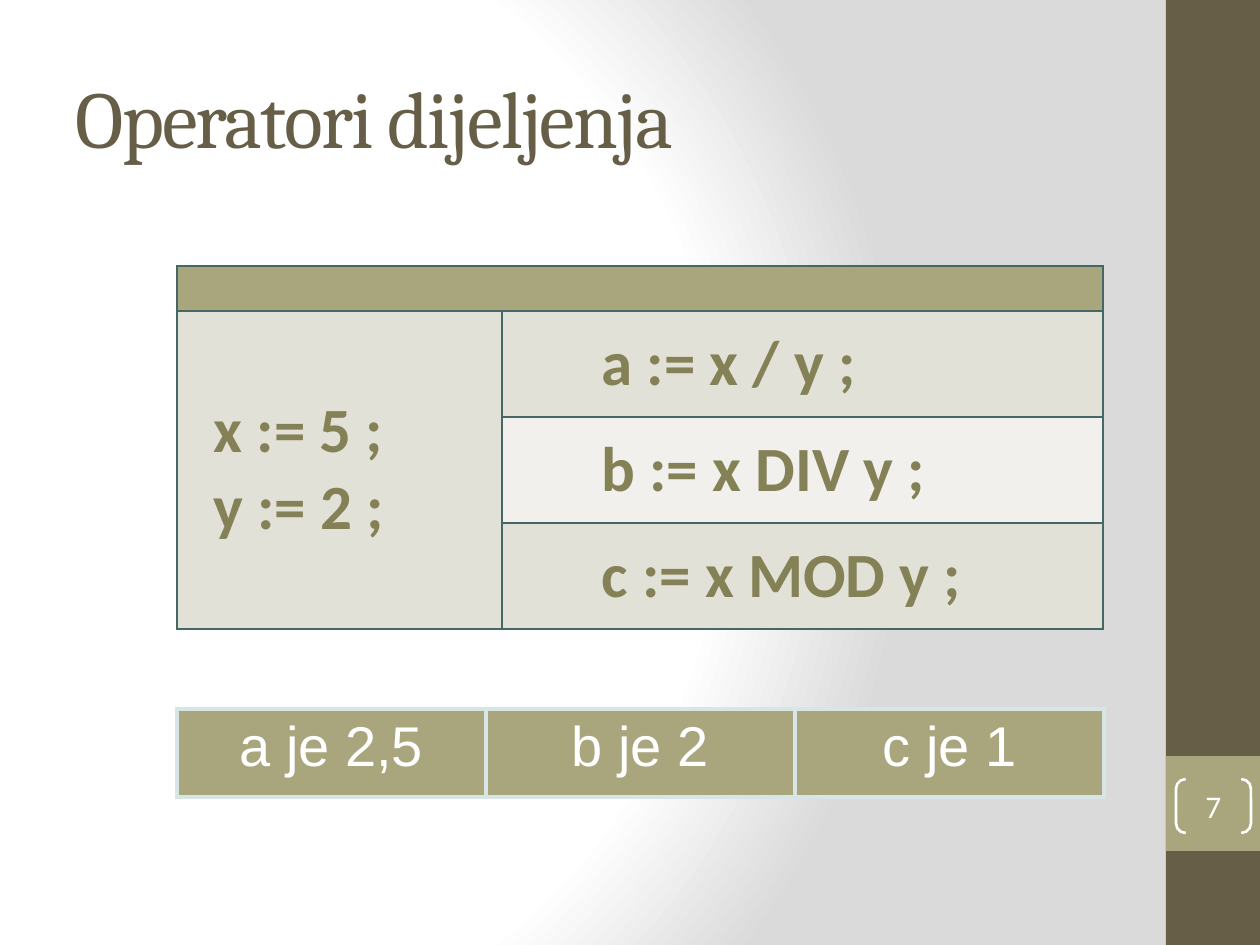
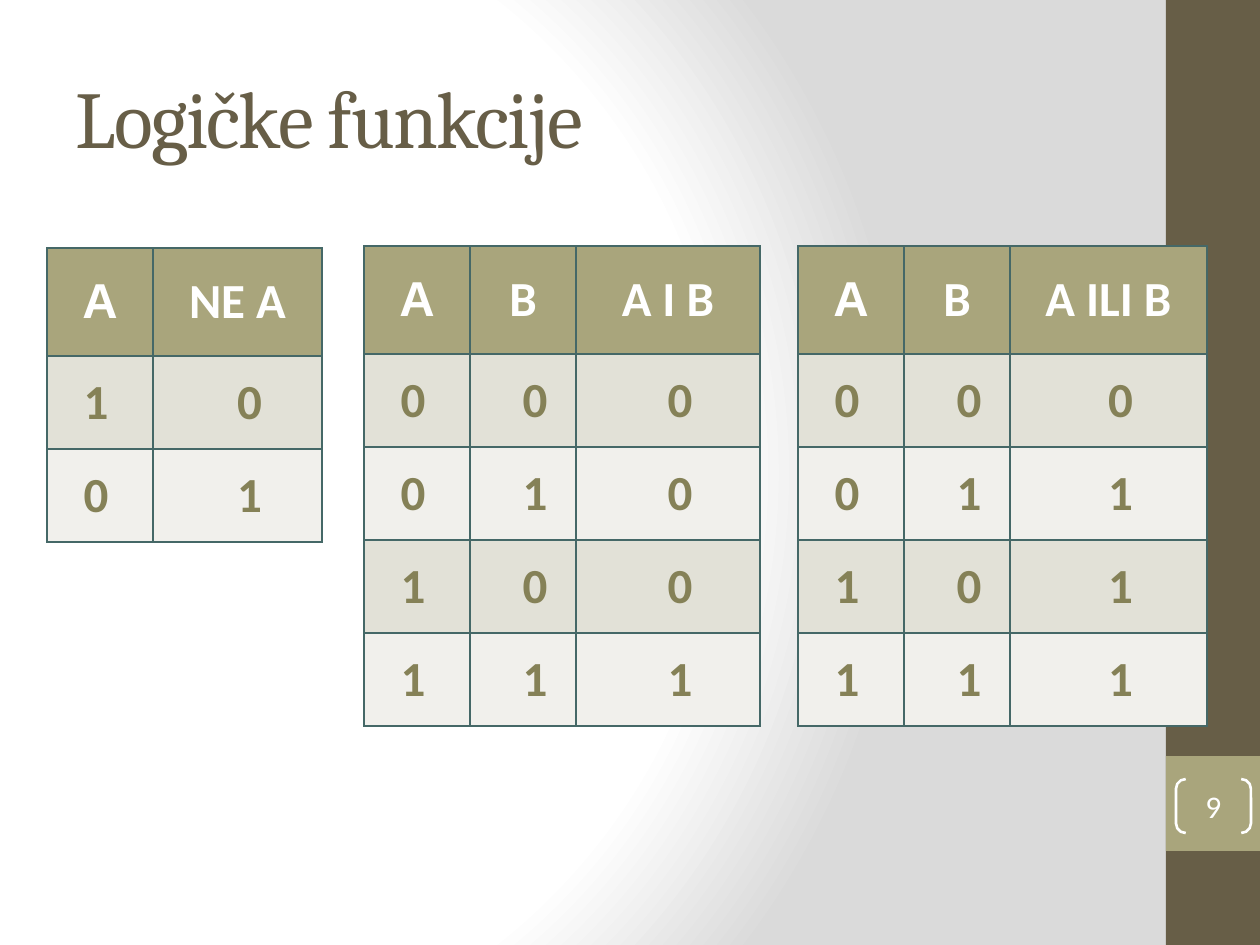
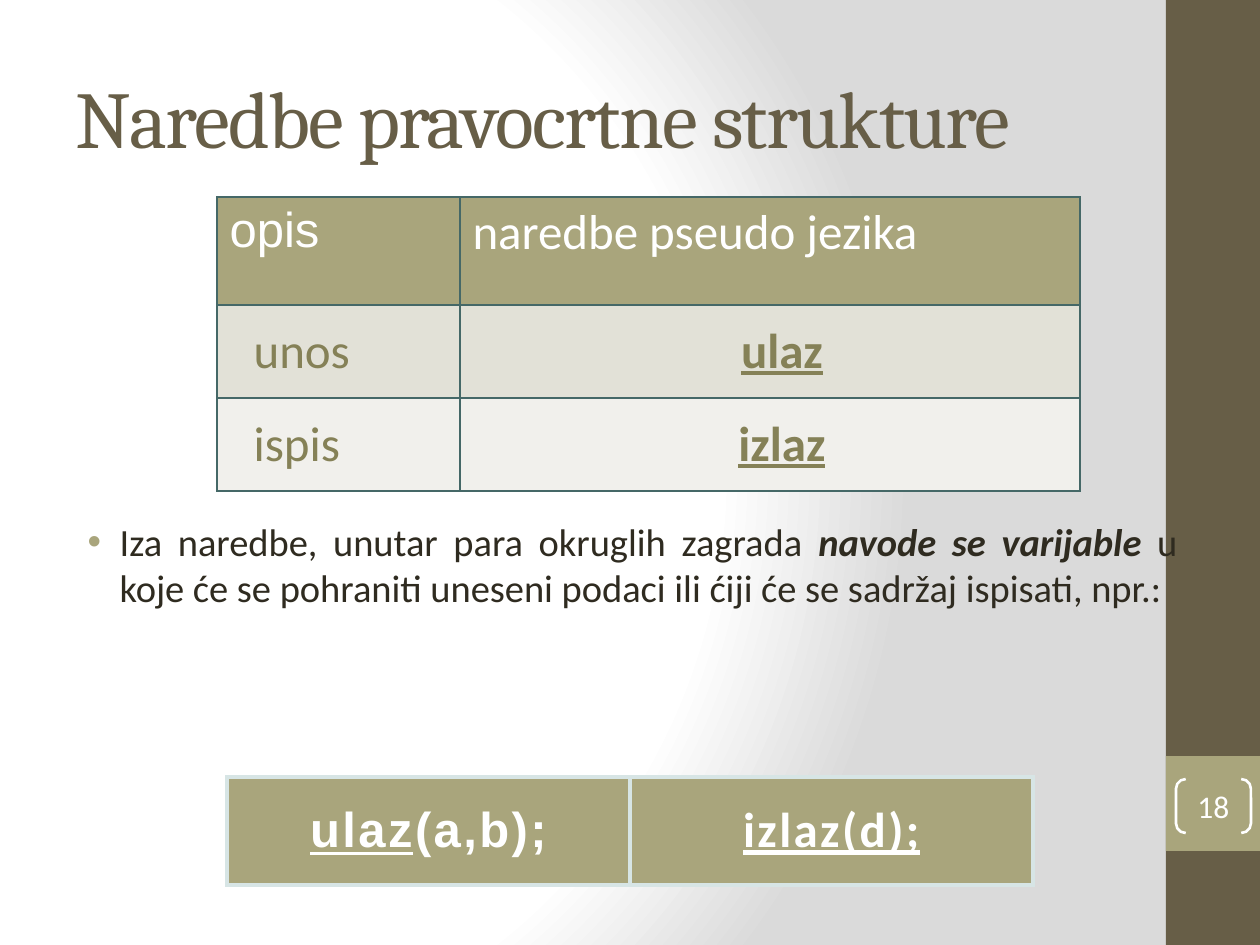
import dataclasses
import itertools

import lxml.etree
import pptx
import pptx.dml.color
import pptx.enum.shapes
import pptx.enum.text
import pptx.oxml.ns
import pptx.util

ALIGN = pptx.enum.text.PP_ALIGN
ANCHOR = pptx.enum.text.MSO_ANCHOR
SHAPE = pptx.enum.shapes.MSO_SHAPE
EMU_PER_PX = 914400 / 126
TITLE_ONLY, TITLE_AND_BODY = 5, 1


@dataclasses.dataclass(frozen=True)
class Theme:
    brown: str = "675E47"
    olive: str = "A9A57C"
    code: str = "858157"
    ink: str = "2F2B20"
    white: str = "FFFFFF"
    grey: str = "DADADA"
    bands: tuple = ("F1F0EC", "E2E1D7")
    grid: str = "456867"
    pale_grid: str = "D7E5E5"
    title_size: int = 46
    code_size: int = 36
    result_size: int = 32
    table_size: int = 28
    body_size: int = 22
    number_size: int = 18
    heading_font: str = "Cambria"
    body_font: str = "Calibri"
    plain_font: str = "Arial"


THEME = Theme()
TITLE = dict(name=THEME.heading_font, size=THEME.title_size, color=THEME.brown, spacing=-1)
BODY = dict(name=THEME.body_font, size=THEME.body_size, color=THEME.ink)
NUMBER = dict(name=THEME.body_font, size=THEME.number_size, color=THEME.white)
HEAD = dict(name=THEME.body_font, size=THEME.table_size, color=THEME.white, bold=False)
HEAD_BOLD = {**HEAD, "bold": True}
ENTRY = {**HEAD, "color": THEME.code}
ENTRY_BOLD = {**ENTRY, "bold": True}
KEYWORD = {**ENTRY_BOLD, "underline": True}
CODE = {**ENTRY_BOLD, "size": THEME.code_size}
RESULT = {**HEAD, "name": THEME.plain_font, "size": THEME.result_size}
CALL = {**HEAD_BOLD, "spacing": 1.4}
PLAIN = dict(name=THEME.plain_font)
HANGING = (86, -62)
HANGING_DEEP = (149, -62)


@dataclasses.dataclass
class Entry:
    lines: list
    align: object = ALIGN.LEFT
    indent: tuple = (0, 0)
    level: int = 0
    anchor: object = ANCHOR.MIDDLE


def px(value):
    return pptx.util.Emu(round(value * EMU_PER_PX))


def rgb(value):
    return pptx.dml.color.RGBColor.from_string(value)


def add_node(parent, tag, **values):
    return lxml.etree.SubElement(parent, pptx.oxml.ns.qn(tag), values)


def add_color(parent, color):
    add_node(parent, "a:srgbClr", val=color)


class Painter:
    def __init__(self, theme):
        self.theme = theme
        self.deck = pptx.Presentation()
        self.deck.slide_width, self.deck.slide_height = px(1260), px(945)
        self.page = None
        self.paint_background()

    def paint_background(self):
        master = self.deck.slide_master
        master.background.fill.gradient()
        gradient = next(master.element.iter(pptx.oxml.ns.qn("a:gradFill")))
        for child in list(gradient):
            gradient.remove(child)
        stops = add_node(gradient, "a:gsLst")
        for place, color in ((0, self.theme.white), (75, self.theme.white), (100, self.theme.grey)):
            add_color(add_node(stops, "a:gs", pos=str(place * 1000)), color)
        circle = add_node(gradient, "a:path", path="circle")
        add_node(circle, "a:fillToRect", l="20000", t="50000", r="100000", b="50000")

    def start(self, title, number, layout=TITLE_ONLY):
        self.page = self.deck.slides.add_slide(self.deck.slide_layouts[layout])
        self.band(1166, 756, 94, 95, self.theme.olive)
        self.band(1166, 0, 94, 945, self.theme.brown)
        box = self.page.shapes.title
        self.place(box, 63, 38, 1050, 157)
        box.text_frame.vertical_anchor = ANCHOR.MIDDLE
        self.add_spans(box.text_frame.paragraphs[0], [(title, {})], TITLE, ALIGN.LEFT)
        self.page_number(number)

    def place(self, box, *frame):
        for name, value in zip(("left", "top", "width", "height"), frame):
            setattr(box, name, px(value))

    def band(self, left, top, width, height, color):
        box = self.page.shapes.add_shape(SHAPE.RECTANGLE, px(left), px(top), px(width), px(height))
        box.shadow.inherit = False
        box.fill.solid()
        box.fill.fore_color.rgb = rgb(color)
        box.line.fill.background()
        self.page.shapes.element.insert(2, box.element)

    def page_number(self, number):
        box = self.page.shapes.add_shape(SHAPE.DOUBLE_BRACKET, px(1176), px(779), px(75), px(54))
        box.adjustments[0] = 0.18
        box.shadow.inherit = False
        box.fill.background()
        box.line.color.rgb = rgb(self.theme.white)
        box.line.width = pptx.util.Pt(1.5)
        frame = box.text_frame
        frame.vertical_anchor = ANCHOR.MIDDLE
        for side in ("left", "top", "right", "bottom"):
            setattr(frame, f"margin_{side}", 0)
        self.add_spans(frame.paragraphs[0], [(str(number), {})], NUMBER, ALIGN.CENTER)

    def add_spans(self, para, spans, base, align):
        para.alignment = align
        for text, changes in spans:
            look = {**base, **changes}
            span = para.add_run()
            span.text = text
            span.font.color.rgb = rgb(look.pop("color"))
            spacing = look.pop("spacing", None)
            if spacing is not None:
                span.font._element.set("spc", str(round(spacing * 100)))
            look["size"] = pptx.util.Pt(look["size"])
            for name, value in look.items():
                setattr(span.font, name, value)

    def indent(self, para, left, first):
        properties = para._p.get_or_add_pPr()
        properties.set("marL", str(px(left)))
        properties.set("indent", str(px(first)))
        return properties

    def bullet(self, frame, spans):
        box = self.page.placeholders[1]
        self.place(box, *frame)
        para = box.text_frame.paragraphs[0]
        para.space_before = pptx.util.Pt(0)
        properties = self.indent(para, 48, -32)
        add_color(add_node(properties, "a:buClr"), self.theme.olive)
        add_node(properties, "a:buChar", char="•")
        self.add_spans(para, spans, BODY, ALIGN.JUSTIFY)

    def border(self, cell, color, width):
        properties = cell._tc.get_or_add_tcPr()
        for index, side in enumerate("LRTB"):
            line = add_node(properties, f"a:ln{side}", w=str(pptx.util.Pt(width)))
            add_color(add_node(line, "a:solidFill"), color)
            properties.insert(index, line)

    def fill_cell(self, cell, entry):
        cell.vertical_anchor = entry.anchor
        for index, (spans, base) in enumerate(entry.lines):
            frame = cell.text_frame
            para = frame.add_paragraph() if index else frame.paragraphs[0]
            para.level = entry.level
            self.indent(para, *entry.indent)
            self.add_spans(para, spans, base, entry.align)

    def table(self, left, top, columns, rows, entries, merges=(), pale=False):
        box = self.page.shapes.add_table(len(rows), len(columns), px(left), px(top),
                                         px(sum(columns)), px(sum(rows)))
        grid = box.table
        grid.first_row = grid.horz_banding = False
        for column, width in zip(grid.columns, columns):
            column.width = px(width)
        for row, height in zip(grid.rows, rows):
            row.height = px(height)
        line = (self.theme.pale_grid, 2.25) if pale else (self.theme.grid, 1)
        for r, c in itertools.product(range(len(rows)), range(len(columns))):
            cell = grid.cell(r, c)
            cell.fill.solid()
            cell.fill.fore_color.rgb = rgb(self.theme.bands[r % 2] if r else self.theme.olive)
            self.border(cell, *line)
            if entries[r][c]:
                self.fill_cell(cell, entries[r][c])
            else:
                cell.margin_top = cell.margin_bottom = 0
        for first, last in merges:
            grid.cell(*first).merge(grid.cell(*last))


def entry(text, look, **layout):
    return Entry([([(text, {})], look)], **layout)


def centered(text, look, **layout):
    return entry(text, look, align=ALIGN.CENTER, **layout)


def truth_table(painter, left, top, columns, headings, inputs, function):
    entries = [[centered(text, {**HEAD_BOLD, **({} if i else PLAIN)})
                for i, text in enumerate(headings)]]
    for values in inputs:
        first, *others = (*values, int(function(*values)))
        entries.append([entry(str(first), ENTRY_BOLD, indent=HANGING)]
                       + [centered(str(value), ENTRY_BOLD, indent=HANGING) for value in others])
    painter.table(left, top, columns, [108] + [93] * len(inputs), entries)


def division_page(painter):
    painter.start("Operatori dijeljenja", 7)
    values = Entry([([(text, {})], CODE) for text in ("x := 5 ;", "y := 2 ;")], indent=HANGING)
    statements = [entry(text, CODE, indent=HANGING_DEEP, level=1)
                  for text in ("a := x / y ;", "b := x DIV y ;", "c := x MOD y ;")]
    entries = [[None, None]] + [[None if i else values, item] for i, item in enumerate(statements)]
    painter.table(177, 266, [325, 601], [45, 106, 106, 106], entries,
                  merges=[((0, 0), (0, 1)), ((1, 0), (3, 0))])
    results = [centered(text, RESULT, anchor=ANCHOR.TOP)
               for text in ("a je 2,5", "b je 2", "c je 1")]
    painter.table(177, 709, [309] * 3, [88], [results], pale=True)


def logic_page(painter):
    painter.start("Logičke funkcije", 9)
    pairs = list(itertools.product((0, 1), repeat=2))
    truth_table(painter, 47, 248, [106, 169], ["A", "NE A"], [(1,), (0,)], lambda a: not a)
    truth_table(painter, 364, 246, [106, 106, 184], ["A", "B", "A I B"], pairs,
                lambda a, b: a and b)
    truth_table(painter, 798, 246, [106, 106, 197], ["A", "B", "A ILI B"], pairs,
                lambda a, b: a or b)


def statements_page(painter):
    painter.start("Naredbe pravocrtne strukture", 18, TITLE_AND_BODY)
    painter.bullet((59, 512, 1131, 227), [
        ("Iza naredbe, unutar para okruglih zagrada ", {}),
        ("navode se varijable", dict(bold=True, italic=True)),
        (" u koje će se pohraniti uneseni podaci ili ćiji će se sadržaj ispisati, npr.:", {}),
    ])
    entries = [[entry("opis", {**HEAD, **PLAIN}, anchor=ANCHOR.TOP),
                entry("naredbe pseudo jezika", HEAD, anchor=ANCHOR.TOP)]]
    for meaning, keyword in (("unos", "ulaz"), ("ispis", "izlaz")):
        entries.append([entry(meaning, ENTRY, indent=HANGING),
                        centered(keyword, KEYWORD, indent=HANGING)])
    painter.table(217, 197, [243, 620], [108, 93, 93], entries)
    input_call = Entry([([("ulaz", dict(underline=True)), ("(a,b);", {})], {**CALL, **PLAIN})],
                       align=ALIGN.CENTER)
    output_call = centered("izlaz(d);", {**CALL, "underline": True})
    painter.table(227, 777, [403] * 2, [108], [[input_call, output_call]], pale=True)


def main():
    painter = Painter(THEME)
    for build in (division_page, logic_page, statements_page):
        build(painter)
    painter.deck.save("out.pptx")


if __name__ == "__main__":
    main()
